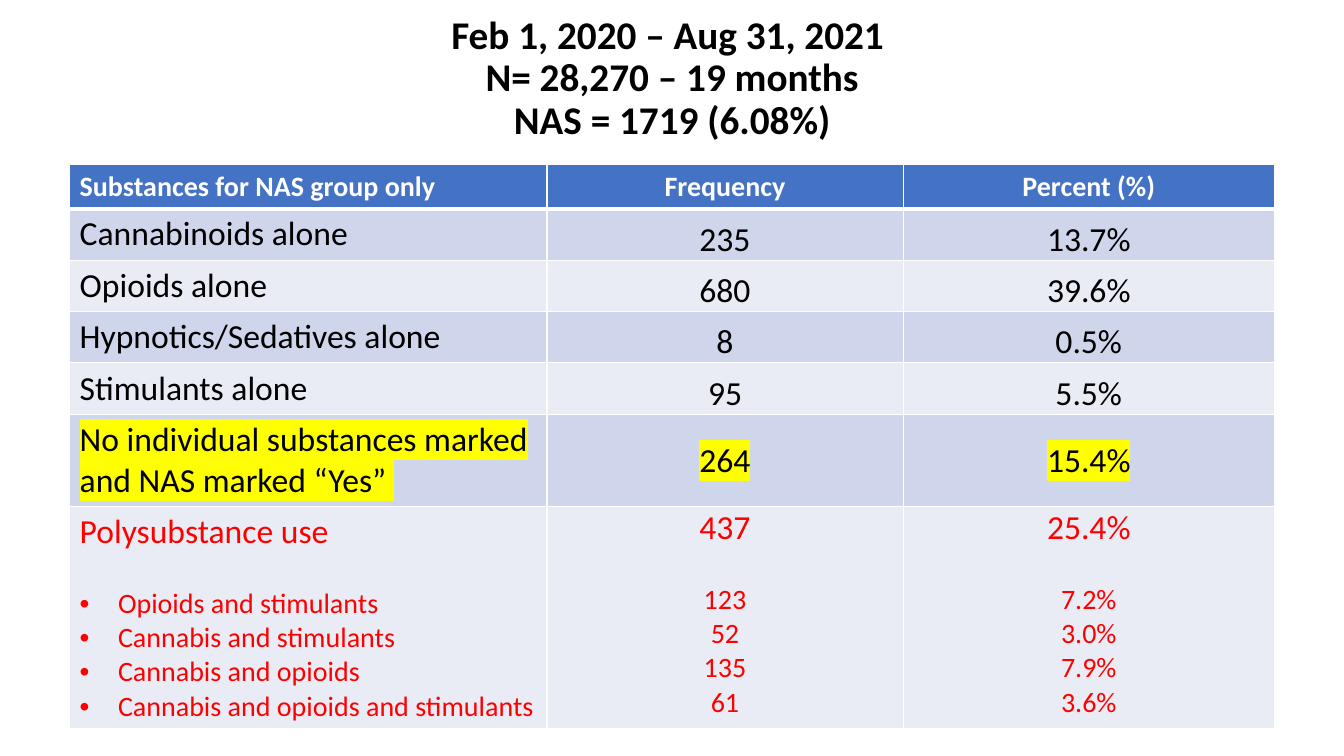
from dataclasses import dataclass
from lxml.etree import SubElement
from pptx import Presentation
from pptx.dml.color import RGBColor
from pptx.enum.text import MSO_ANCHOR, MSO_AUTO_SIZE, PP_ALIGN
from pptx.oxml.ns import qn
from pptx.util import Inches, Pt


@dataclass(frozen=True)
class Theme:
    font: str = "Calibri"
    ink: str = "000000"
    white: str = "FFFFFF"
    head: str = "4472C4"
    odd: str = "CFD5EA"
    even: str = "E9EBF5"
    mark: str = "FFFF00"
    alert: str = "FF0000"
    title: int = 28
    main: int = 24
    small: int = 20
    gap: float = 24.4


THEME = Theme()
WIDE, HIGH = Inches(13.33), Inches(7.5)
TITLE = ["Feb 1, 2020 – Aug 31, 2021 ", "N= 28,270 – 19 months", "NAS = 1719 (6.08%)"]
COLS = [4.73, 3.53, 3.68]
ROWS = [0.44, 0.51, 0.51, 0.51, 0.51, 0.91, 2.2]
DATA = [
    ["Substances for NAS group only", "Frequency", "Percent (%)"],
    ["Cannabinoids alone", "235", "13.7%"],
    ["Opioids alone", "680", "39.6%"],
    ["Hypnotics/Sedatives alone", "8", "0.5%"],
    ["Stimulants alone", "95", "5.5%"],
    ["No individual substances marked and NAS marked “Yes” ", "264", "15.4%"],
    ["Polysubstance use\nOpioids and stimulants\nCannabis and stimulants\n"
     "Cannabis and opioids\nCannabis and opioids and stimulants",
     "437\n123\n52\n135\n61",
     "25.4%\n7.2%\n3.0%\n7.9%\n3.6%"],
]
MARKED, POLY = 5, 6


def box(left, top, width, height):
    return [int(WIDE * left / 100), int(HIGH * top / 100),
            int(WIDE * width / 100), int(HIGH * height / 100)]


def style(para, size, color, bold=False, mark=None):
    for run in para.runs:
        font = run.font
        font.name, font.size, font.bold = THEME.font, Pt(size), bold
        font.color.rgb = RGBColor.from_string(color)
        if mark:
            props = run._r.get_or_add_rPr()
            glow = SubElement(props, qn("a:highlight"))
            SubElement(glow, qn("a:srgbClr"), val=mark)
            props.find(qn("a:solidFill")).addnext(glow)


def indent(para, left, first):
    props = para._p.get_or_add_pPr()
    props.set("marL", str(Inches(left)))
    props.set("indent", str(Inches(first)))
    return props


def bullet(para):
    props = indent(para, 0.38, -0.38)
    SubElement(props, qn("a:buFont"), typeface="Arial")
    SubElement(props, qn("a:buChar"), char="•")


def border(cell, head):
    props = cell._tc.get_or_add_tcPr()
    for spot, side in enumerate("LRTB"):
        width = Pt(3 if head and side == "B" else 1)
        line = props.makeelement(qn("a:ln" + side), {"w": str(width)})
        fill = SubElement(line, qn("a:solidFill"))
        SubElement(fill, qn("a:srgbClr"), val=THEME.white)
        props.insert(spot, line)


def fill_cell(cell, text, row, col):
    head = row == 0
    cell.text_frame.text = text
    cell.fill.solid()
    shade = THEME.head if head else THEME.odd if row % 2 else THEME.even
    cell.fill.fore_color.rgb = RGBColor.from_string(shade)
    border(cell, head)
    cell.vertical_anchor = MSO_ANCHOR.TOP if head else MSO_ANCHOR.BOTTOM
    if col and not head:
        cell.margin_left = cell.margin_right = cell.margin_top = Inches(0.01)
        cell.margin_bottom = 0
        if row == MARKED:
            cell.vertical_anchor = MSO_ANCHOR.MIDDLE
        if row == POLY:
            cell.vertical_anchor = MSO_ANCHOR.TOP
    color = THEME.white if head else THEME.alert if row == POLY else THEME.ink
    for rank, para in enumerate(cell.text_frame.paragraphs):
        if rank and not col:
            bullet(para)
        if para.text == "135":
            indent(para, 0, -0.13)
        para.alignment = PP_ALIGN.CENTER if col else PP_ALIGN.LEFT
        if rank == 1:
            para.space_before = Pt(THEME.gap)
        size = THEME.small if head or rank else THEME.main
        style(para, size, color, head, THEME.mark if row == MARKED else None)


def add_title(slide, area):
    title = slide.shapes.title
    title.left, title.top, title.width, title.height = area
    frame = title.text_frame
    frame.text = "\v".join(TITLE)
    frame.word_wrap = True
    frame.auto_size = MSO_AUTO_SIZE.NONE
    frame.vertical_anchor = MSO_ANCHOR.MIDDLE
    para = frame.paragraphs[0]
    para.alignment, para.line_spacing = PP_ALIGN.CENTER, 0.9
    style(para, THEME.title, THEME.ink, True)


def add_grid(slide, area):
    grid = slide.shapes.add_table(len(ROWS), len(COLS), *area).table
    for col, share in zip(grid.columns, COLS):
        col.width = int(area[2] * share / sum(COLS))
    for row, share in zip(grid.rows, ROWS):
        row.height = int(area[3] * share / sum(ROWS))
    for row, texts in enumerate(DATA):
        for col, text in enumerate(texts):
            fill_cell(grid.cell(row, col), text, row, col)


def main():
    deck = Presentation()
    deck.slide_width, deck.slide_height = WIDE, HIGH
    slide = deck.slides.add_slide(deck.slide_layouts[5])
    add_title(slide, box(1.58, 3.2, 96.85, 14.53))
    add_grid(slide, box(5.18, 21.73, 89.65, 74.53))
    deck.save("out.pptx")


if __name__ == "__main__":
    main()
